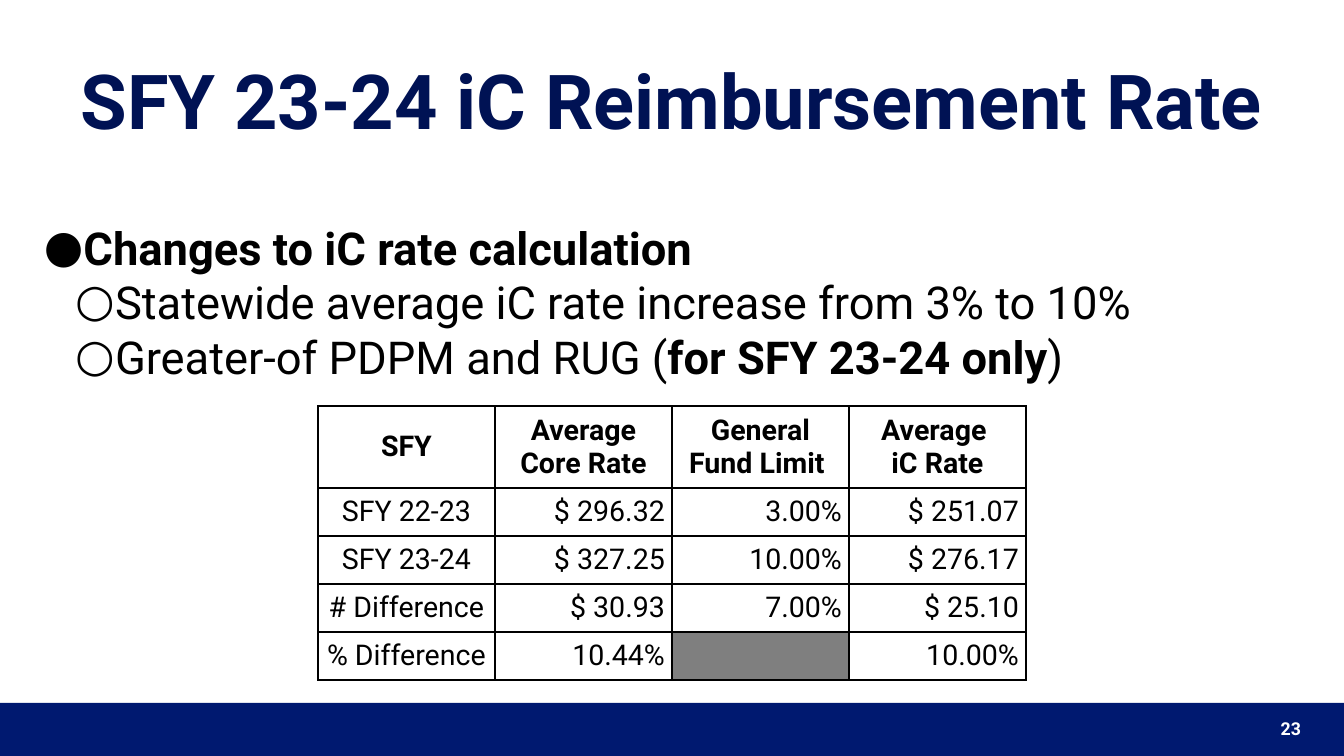
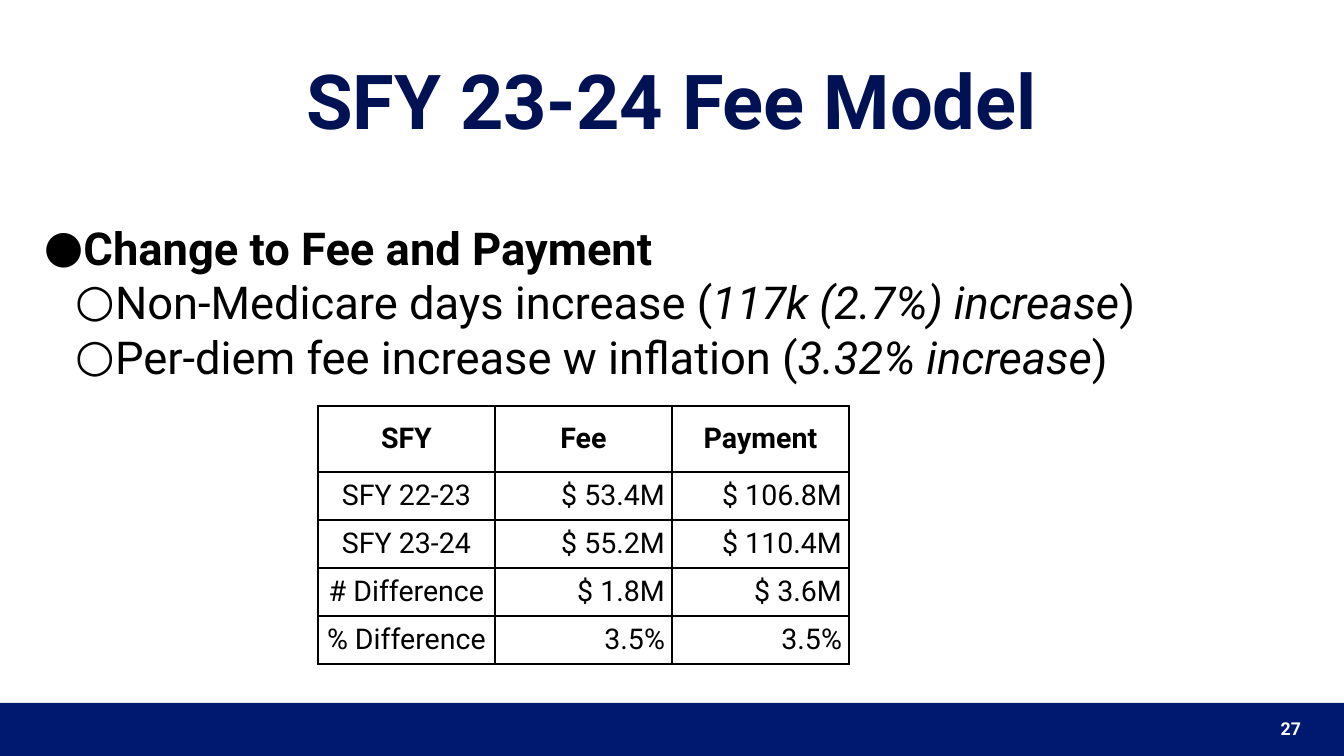
"""Build two slides on reimbursement rates and fees, each with bullets and a table."""
import pptx
import pptx.dml.color
import pptx.enum.shapes
import pptx.enum.text
import pptx.oxml
import pptx.oxml.ns
import pptx.util

PX = 12897
WIDE, HIGH = 1344, 756
FONT = "Roboto"
HUES = {"title": "001254", "band": "001970", "text": "000000",
        "white": "FFFFFF", "void": "7F7F7F"}
LEFT, MID, RIGHT = (pptx.enum.text.PP_ALIGN.LEFT, pptx.enum.text.PP_ALIGN.CENTER,
                    pptx.enum.text.PP_ALIGN.RIGHT)
CENTRE = pptx.enum.text.MSO_ANCHOR.MIDDLE
NS = pptx.oxml.ns.nsdecls("a")

SLIDES = [
    {
        "title": "SFY 23-24 iC Reimbursement Rate",
        "page": "23",
        "points": [
            (0, [("Changes to iC rate calculation", "b")]),
            (1, [("Statewide average iC rate increase from 3% to 10%", "")]),
            (1, [("Greater-of PDPM and RUG (", ""), ("for SFY 23-24 only", "b"), (")", "")]),
        ],
        "head": 82,
        "rows": [
            ["SFY", "Average Core Rate", "General Fund Limit ", "Average \niC Rate"],
            ["SFY 22-23", "$ 296.32", "3.00%", "$ 251.07"],
            ["SFY 23-24", "$ 327.25", "10.00%", "$ 276.17"],
            ["# Difference", "$ 30.93", "7.00%", "$ 25.10"],
            ["% Difference", "10.44%", None, "10.00%"],
        ],
    },
    {
        "title": "SFY 23-24 Fee Model",
        "page": "27",
        "points": [
            (0, [("Change to Fee and Payment", "b")]),
            (1, [("Non-Medicare days increase (", ""), ("117k (2.7%) increase", "i"), (")", "")]),
            (1, [("Per-diem fee increase w inflation (", ""), ("3.32% increase", "i"), (")", "")]),
        ],
        "head": 66,
        "rows": [
            ["SFY", "Fee", "Payment"],
            ["SFY 22-23", "$ 53.4M", "$ 106.8M"],
            ["SFY 23-24", "$ 55.2M", "$ 110.4M"],
            ["# Difference", "$ 1.8M", "$ 3.6M"],
            ["% Difference", "3.5%", "3.5%"],
        ],
    },
]


def px(*vals):
    """Turn px lengths into EMU."""
    return [pptx.util.Emu(val * PX) for val in vals]


def hue(name):
    """Return a named colour."""
    return pptx.dml.color.RGBColor.from_string(HUES[name])


def add_run(para, text, size, tint, style=""):
    """Add one styled run to a paragraph."""
    run = para.add_run()
    run.text = text
    font = run.font
    font.name, font.size = FONT, pptx.util.Pt(size)
    font.bold, font.italic = "b" in style, "i" in style
    font.color.rgb = hue(tint)


def set_frame(frame, pad, anchor):
    """Set wrapping, anchor and insets of a text frame."""
    frame.word_wrap = True
    frame.auto_size = pptx.enum.text.MSO_AUTO_SIZE.NONE
    frame.vertical_anchor = anchor
    (frame.margin_left, frame.margin_top,
     frame.margin_right, frame.margin_bottom) = px(*pad)


def add_title(slide, box, text):
    """Place the title placeholder in its box."""
    title = slide.shapes.title
    title.left, title.top, title.width, title.height = px(*box)
    set_frame(title.text_frame, (0, 0, 0, 0), CENTRE)
    para = title.text_frame.paragraphs[0]
    para.alignment = MID
    add_run(para, text, 77, "title", "b")


def add_band(slide, box, page):
    """Draw the footer band with the page number at its right."""
    left, top, width, height = box
    band = slide.shapes.add_shape(pptx.enum.shapes.MSO_SHAPE.RECTANGLE, *px(*box))
    band.shadow.inherit = False
    band.fill.solid()
    band.fill.fore_color.rgb = hue("band")
    band.line.fill.background()
    note = slide.shapes.add_textbox(*px(left + width - 258, top + 5, 222, 40))
    set_frame(note.text_frame, (7, 4, 7, 4), CENTRE)
    para = note.text_frame.paragraphs[0]
    para.alignment = RIGHT
    add_run(para, page, 18, "white", "b")


def set_bullet(para, level):
    """Give a paragraph the bullet and indent of its level."""
    para.level = level
    props = para._p.get_or_add_pPr()
    props.set("marL", str((35, 71)[level] * PX))
    props.set("indent", str(-40 * PX))
    for part in (f'<a:buClr {NS}><a:srgbClr val="{HUES["text"]}"/></a:buClr>',
                 f'<a:buFont {NS} typeface="{FONT}"/>',
                 f'<a:buChar {NS} char="{"●○"[level]}"/>'):
        props.append(pptx.oxml.parse_xml(part))


def add_points(slide, box, points):
    """Write the bullet list."""
    frame = slide.shapes.add_textbox(*px(*box)).text_frame
    set_frame(frame, (10, 10, 10, 10), pptx.enum.text.MSO_ANCHOR.TOP)
    for num, (level, runs) in enumerate(points):
        para = frame.add_paragraph() if num else frame.paragraphs[0]
        para.alignment = LEFT
        set_bullet(para, level)
        for text, style in runs:
            add_run(para, text, 46, "text", style)


def set_edges(cell):
    """Draw the four borders of a cell."""
    props = cell._tc.get_or_add_tcPr()
    for side in "LRTB":
        props.append(pptx.oxml.parse_xml(
            f'<a:ln{side} {NS} w="{pptx.util.Pt(1.5)}"><a:solidFill>'
            f'<a:srgbClr val="{HUES["text"]}"/></a:solidFill></a:ln{side}>'))


def fill_cell(cell, text, align, style):
    """Format one cell and write its lines; None makes it a grey blank."""
    set_edges(cell)
    cell.vertical_anchor = CENTRE
    cell.margin_left, cell.margin_top, cell.margin_right, cell.margin_bottom = px(7, 7, 7, 7)
    if text is None:
        cell.fill.solid()
        cell.fill.fore_color.rgb = hue("void")
        return
    cell.fill.background()
    frame = cell.text_frame
    for num, line in enumerate(text.split("\n")):
        para = frame.add_paragraph() if num else frame.paragraphs[0]
        para.alignment = align
        add_run(para, line, 29, "text", style)


def add_grid(slide, spot, rows, head):
    """Build the table from its top left corner."""
    wide, high = 177, 48
    count = len(rows[0])
    size = (wide * count, head + high * (len(rows) - 1))
    table = slide.shapes.add_table(len(rows), count, *px(*spot, *size)).table
    table.first_row = table.horz_banding = False
    for col in table.columns:
        col.width = px(wide)[0]
    for r, row in enumerate(rows):
        table.rows[r].height = px(high if r else head)[0]
        for c, text in enumerate(row):
            align = RIGHT if r and c else MID
            fill_cell(table.cell(r, c), text, align, "" if r else "b")


def add_slide(deck, data):
    """Add one slide with band, title, bullets and table."""
    slide = deck.slides.add_slide(deck.slide_layouts[5])
    add_band(slide, (0, 703, WIDE, HIGH - 703), data["page"])
    add_title(slide, (0, 37, WIDE, 125), data["title"])
    add_points(slide, (34, 210, 1277, 185), data["points"])
    add_grid(slide, (318, 406), data["rows"], data["head"])


def main():
    """Build and save the deck."""
    deck = pptx.Presentation()
    deck.slide_width, deck.slide_height = px(WIDE, HIGH)
    for data in SLIDES:
        add_slide(deck, data)
    deck.save("out.pptx")


if __name__ == "__main__":
    main()
